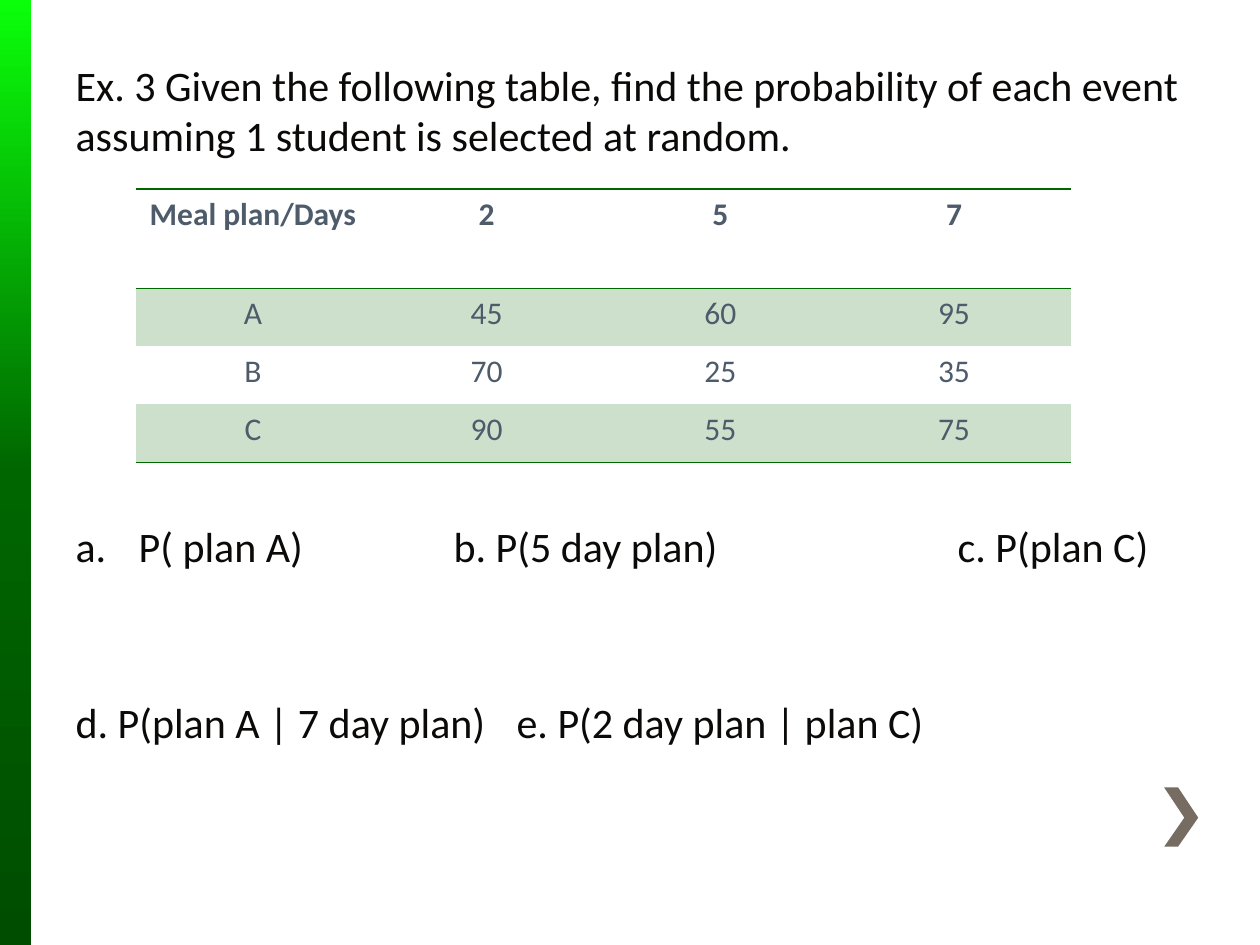
from copy import deepcopy

from lxml.etree import SubElement
from pptx import Presentation
from pptx.dml.color import RGBColor
from pptx.enum.shapes import MSO_SHAPE
from pptx.enum.text import MSO_ANCHOR, MSO_AUTO_SIZE, PP_ALIGN
from pptx.oxml.ns import qn
from pptx.util import Inches, Pt

GREEN = "006600"
BAND = "CCE0CC"
NO_STYLE_NO_GRID = "{2D5ABB26-0587-4C30-8999-92F81FD0307C}"


def rgb(hex_color):
    return RGBColor.from_string(hex_color)


def add_border(cell, tag):
    """Draw one edge of a cell; add lnT before lnB, and both before the fill."""
    line = SubElement(cell._tc.get_or_add_tcPr(), qn(tag), w=str(Pt(1)))
    fill = SubElement(line, qn("a:solidFill"))
    SubElement(fill, qn("a:srgbClr"), val=GREEN)


deck = Presentation()
deck.slide_width, deck.slide_height = Inches(10), Inches(7.5)
page = deck.slides.add_slide(deck.slide_layouts[1])
title = page.shapes.title
title._element.getparent().remove(title._element)

# Green gradient bar on the left edge
bar = page.shapes.add_shape(MSO_SHAPE.RECTANGLE, 0, 0, Inches(0.25), Inches(7.5))
bar.shadow.inherit = False
bar.line.fill.background()
bar.fill.gradient()
bar.fill.gradient_angle = 270
stop_list = bar._element.spPr.find(".//" + qn("a:gsLst"))
stop_list.insert(1, deepcopy(stop_list[0]))
bar_stops = [(0, "0AFF0A"), (0.5, GREEN), (1, "004D00")]
for stop, (position, color) in zip(bar.fill.gradient_stops, bar_stops):
    stop.position = position
    stop.color.rgb = rgb(color)

# Arrow in the lower right corner
arrow_points = [(9.24, 6.25), (9.4, 6.49), (9.24, 6.72),
                (9.35, 6.72), (9.51, 6.49), (9.35, 6.25)]
corners = [(Inches(x), Inches(y)) for x, y in arrow_points]
builder = page.shapes.build_freeform(*corners[0])
builder.add_line_segments(corners[1:], close=True)
arrow = builder.convert_to_shape()
arrow.shadow.inherit = False
arrow.fill.solid()
arrow.fill.fore_color.rgb = rgb("776C61")
arrow.line.fill.background()

# Question text: text, space before in points, tab stops in inches, numbered
questions = [
    ("Ex. 3 Given the following table, find the probability of each event "
     "assuming 1 student is selected at random.", 0, [], False),
    ("P( plan A)\tb. P(5 day plan)\tc. P(plan C)", 206, [3, 7], True),
    ("d. P(plan A | 7 day plan)\te. P(2 day plan | plan C)", 72, [5], False),
]
body = page.placeholders[1]
page.shapes._spTree.append(body._element)
body.left, body.top = Inches(0.5), Inches(0.42)
body.width, body.height = Inches(9), Inches(6.28)
frame = body.text_frame
frame.auto_size = MSO_AUTO_SIZE.NONE
frame.vertical_anchor = MSO_ANCHOR.TOP
frame.text = "\n".join(question[0] for question in questions)
for para, (_, space, tabs, numbered) in zip(frame.paragraphs, questions):
    para.space_before = Pt(space)
    properties = para._p.get_or_add_pPr()
    indent = Inches(0.5) if numbered else 0
    properties.set("marL", str(indent))
    properties.set("indent", str(-indent))
    if numbered:
        SubElement(properties, qn("a:buFont"), typeface="+mj-lt")
        SubElement(properties, qn("a:buAutoNum"), type="alphaLcPeriod")
    else:
        SubElement(properties, qn("a:buNone"))
    if tabs:
        tab_list = SubElement(properties, qn("a:tabLst"))
        for tab in tabs:
            SubElement(tab_list, qn("a:tab"), pos=str(Inches(tab)), algn="l")
    for span in para.runs:
        span.font.name = "Calibri"
        span.font.size = Pt(24)
        span.font.color.rgb = rgb("0B0A09")

# Meal plan table
meal_plans = [
    ["Meal plan/Days", "2", "5", "7"],
    ["A", "45", "60", "95"],
    ["B", "70", "25", "35"],
    ["C", "90", "55", "75"],
]
table_frame = page.shapes.add_table(4, 4, Inches(1.08), Inches(1.5),
                                    Inches(7.42), Inches(2.17))
table = table_frame.table
table.horz_banding = False
table._tbl.tblPr.find(qn("a:tableStyleId")).text = NO_STYLE_NO_GRID
for row_number, values in enumerate(meal_plans):
    is_header = row_number == 0
    table.rows[row_number].height = Inches(0.79 if is_header else 0.46)
    for column_number, value in enumerate(values):
        cell = table.cell(row_number, column_number)
        if is_header:
            add_border(cell, "a:lnT")
        if row_number in (0, len(meal_plans) - 1):
            add_border(cell, "a:lnB")
        if row_number % 2:
            cell.fill.solid()
            cell.fill.fore_color.rgb = rgb(BAND)
        else:
            cell.fill.background()
        cell.text = value
        para = cell.text_frame.paragraphs[0]
        para.alignment = PP_ALIGN.CENTER
        font = para.runs[0].font
        font.name = "Calibri"
        font.size = Pt(18)
        font.bold = is_header
        font.color.rgb = rgb("4D5B6B")

deck.save("out.pptx")
